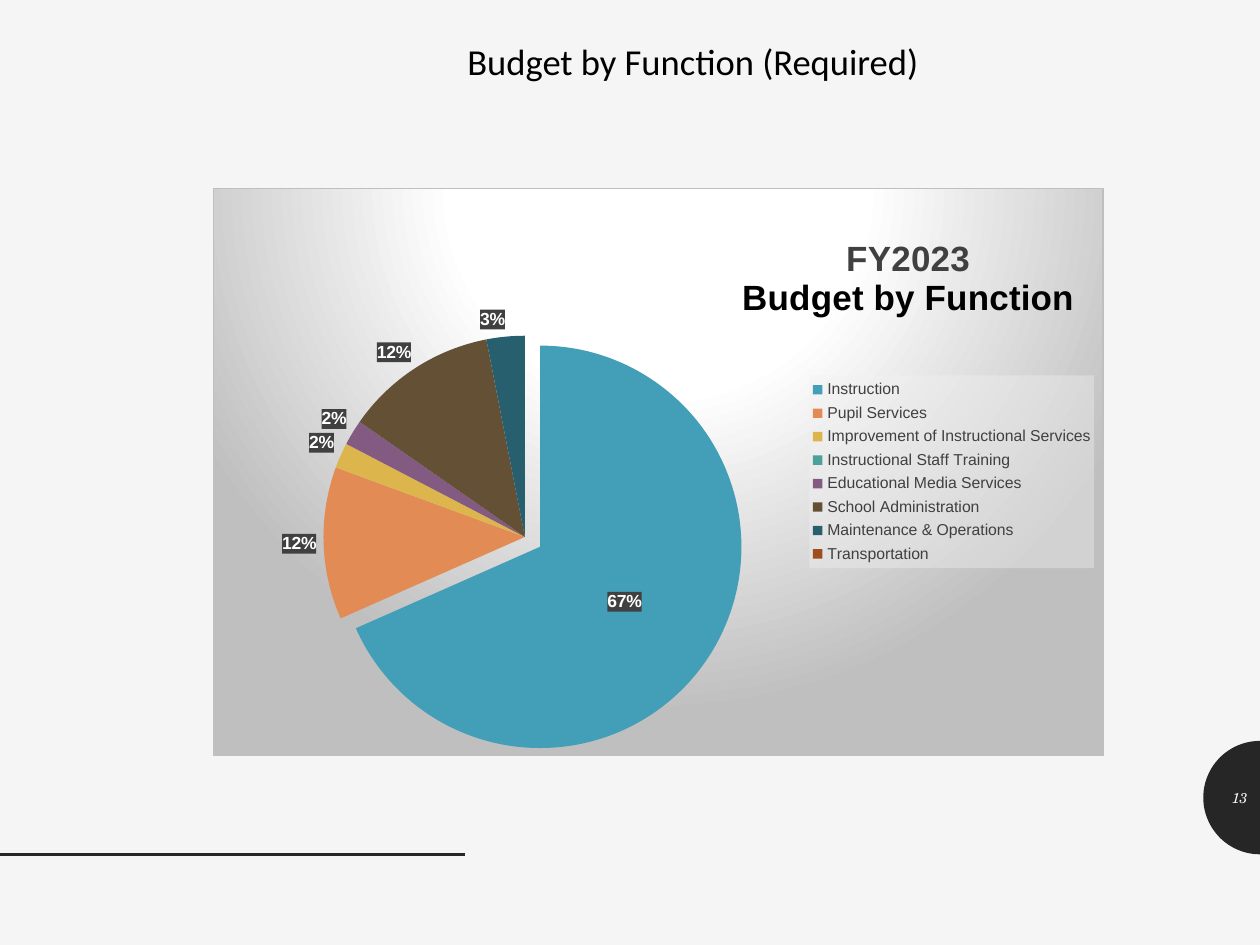
from copy import deepcopy
from dataclasses import dataclass
from math import cos, pi, sin

from pptx import Presentation
from pptx.chart.data import CategoryChartData
from pptx.dml.color import RGBColor
from pptx.enum.chart import XL_CHART_TYPE, XL_LABEL_POSITION, XL_LEGEND_POSITION
from pptx.enum.shapes import MSO_CONNECTOR
from pptx.enum.text import MSO_ANCHOR, PP_ALIGN
from pptx.oxml import parse_xml
from pptx.oxml.ns import nsdecls, qn
from pptx.util import Pt


@dataclass(frozen=True)
class Theme:
    background: str = "F5F5F5"
    dark: str = "262626"
    black: str = "000000"
    white: str = "FFFFFF"
    gray: str = "404040"
    border: str = "BFBFBF"
    legend_fill: str = "F2F2F2"
    heading_font: str = "Calibri"
    chart_font: str = "Arial"
    number_font: str = "TeX Gyre Schola"
    heading_size: float = 20.9
    number_size: float = 8.2
    chart_title_size: float = 20
    label_size: float = 10
    legend_size: float = 9


@dataclass(frozen=True)
class Frame:
    left: float
    top: float
    width: float
    height: float


@dataclass(frozen=True)
class Caption:
    text: str
    frame: Frame
    font: str
    size: float
    color: str
    align: PP_ALIGN
    italic: bool = False
    line_spacing: float = 1.0


@dataclass(frozen=True)
class Slice:
    name: str
    value: int
    color: str


THEME = Theme()
SLICES = [
    Slice("Instruction", 67, "439EB7"),
    Slice("Pupil Services", 12, "E28B55"),
    Slice("Improvement of Instructional Services", 2, "DCB64D"),
    Slice("Instructional Staff Training", 0, "4CA198"),
    Slice("Educational Media Services", 2, "835B82"),
    Slice("School Administration", 12, "645135"),
    Slice("Maintenance & Operations", 3, "285F6E"),
    Slice("Transportation", 0, "9F4E1B"),
]
CAPTIONS = [
    Caption("Budget by Function (Required)", Frame(72, 21.6, 648, 31),
            THEME.heading_font, THEME.heading_size, THEME.black, PP_ALIGN.CENTER, line_spacing=0.8),
    Caption("13", Frame(687.6, 441.4, 32.4, 28.8),
            THEME.number_font, THEME.number_size, THEME.background, PP_ALIGN.RIGHT, italic=True),
]


def style_font(font, name: str, size: float, color: str, bold: bool = False, italic: bool = False) -> None:
    font.name, font.size, font.bold, font.italic = name, Pt(size), bold, italic
    font.color.rgb = RGBColor.from_string(color)


def add_caption(page, caption: Caption) -> None:
    frame = caption.frame
    box = page.shapes.add_textbox(Pt(frame.left), Pt(frame.top), Pt(frame.width), Pt(frame.height))
    box.text_frame.text = caption.text
    box.text_frame.word_wrap = True
    box.text_frame.vertical_anchor = MSO_ANCHOR.MIDDLE
    paragraph = box.text_frame.paragraphs[0]
    paragraph.alignment = caption.align
    paragraph.line_spacing = caption.line_spacing
    style_font(paragraph.runs[0].font, caption.font, caption.size, caption.color, italic=caption.italic)


def add_half_disc(page, center_x: float, center_y: float, radius: float, steps: int = 48) -> None:
    angles = [pi * step / steps for step in range(steps + 1)]
    points = [(Pt(center_x - radius * sin(angle)), Pt(center_y - radius * cos(angle))) for angle in angles]
    builder = page.shapes.build_freeform(*points[0])
    builder.add_line_segments(points[1:], close=True)
    disc = builder.convert_to_shape()
    disc.shadow.inherit = False
    disc.fill.solid()
    disc.fill.fore_color.rgb = RGBColor.from_string(THEME.dark)
    disc.line.fill.background()


def add_rule(page, length: float, top: float) -> None:
    rule = page.shapes.add_connector(MSO_CONNECTOR.STRAIGHT, Pt(0), Pt(top), Pt(length), Pt(top))
    rule.line.color.rgb = RGBColor.from_string(THEME.dark)
    rule.line.width = Pt(2)
    rule._element.spPr.append(parse_xml(f'<a:effectLst {nsdecls("a")}/>'))


def shape_properties(content: str):
    return parse_xml(f'<c:spPr {nsdecls("c", "a")}>{content}</c:spPr>')


def solid_fill(color: str, opacity: int = 100) -> str:
    return (f'<a:solidFill><a:srgbClr val="{color}"><a:alpha val="{opacity * 1000}"/>'
            '</a:srgbClr></a:solidFill>')


def place(element, position: int, left: float, top: float, size: str = "", inner: bool = False) -> None:
    for previous in element.findall(qn("c:layout")):
        element.remove(previous)
    target = '<c:layoutTarget val="inner"/>' if inner else ""
    element.insert(position, parse_xml(
        f'<c:layout {nsdecls("c")}><c:manualLayout>{target}<c:xMode val="edge"/><c:yMode val="edge"/>'
        f'<c:x val="{left}"/><c:y val="{top}"/>{size}</c:manualLayout></c:layout>'))


def extent(width: float, height: float) -> str:
    return f'<c:w val="{width}"/><c:h val="{height}"/>'


def style_labels(series) -> None:
    labels = series.data_labels
    labels.show_value = True
    labels.number_format = '0"%"'
    labels.number_format_is_linked = False
    labels.position = XL_LABEL_POSITION.OUTSIDE_END
    style_font(labels.font, THEME.chart_font, THEME.label_size, THEME.white, bold=True)
    number_format = labels._element.find(qn("c:numFmt"))
    number_format.addnext(shape_properties(solid_fill(THEME.gray)))
    series.points[0].data_label.position = XL_LABEL_POSITION.CENTER
    first = labels._element.find(qn("c:dLbl"))
    for tag in ("c:txPr", "c:spPr", "c:numFmt"):
        for previous in first.findall(qn(tag)):
            first.remove(previous)
        first.find(qn("c:idx")).addnext(deepcopy(labels._element.find(qn(tag))))
    for index, part in enumerate(SLICES):
        if part.value == 0:
            number_format.addprevious(parse_xml(
                f'<c:dLbl {nsdecls("c")}><c:idx val="{index}"/><c:delete val="1"/></c:dLbl>'))


def add_budget_chart(page, frame: Frame) -> None:
    data = CategoryChartData()
    data.categories = [part.name for part in SLICES]
    data.add_series("Series 1", [part.value for part in SLICES])
    chart = page.shapes.add_chart(XL_CHART_TYPE.PIE, Pt(frame.left), Pt(frame.top),
                                  Pt(frame.width), Pt(frame.height), data).chart
    style_font(chart.font, THEME.chart_font, THEME.label_size, THEME.black)
    stops = "".join(f'<a:gs pos="{stop * 1000}"><a:srgbClr val="{color}"/></a:gs>'
                    for stop, color in ((0, THEME.white), (39, THEME.white), (100, THEME.border)))
    chart._chartSpace.find(qn("c:chart")).addnext(shape_properties(
        f'<a:gradFill><a:gsLst>{stops}</a:gsLst><a:path path="circle">'
        '<a:fillToRect l="50000" t="-80000" r="50000" b="180000"/></a:path></a:gradFill>'
        f'<a:ln w="{Pt(0.75)}">{solid_fill(THEME.border)}</a:ln>'))

    chart.has_title = True
    title = chart.chart_title.text_frame
    title.text = "FY2023\nBudget by Function"
    for paragraph, color in zip(title.paragraphs, (THEME.gray, THEME.black)):
        paragraph.alignment = PP_ALIGN.CENTER
        style_font(paragraph.runs[0].font, THEME.chart_font, THEME.chart_title_size, color, bold=True)
    place(chart.chart_title._element, 1, 0.59, 0.08)

    chart.has_legend = True
    legend = chart.legend
    legend.position = XL_LEGEND_POSITION.RIGHT
    legend.include_in_layout = False
    style_font(legend.font, THEME.chart_font, THEME.legend_size, THEME.gray)
    place(legend._element, 1, 0.67, 0.33, extent(0.32, 0.34))
    legend._element.find(qn("c:txPr")).addprevious(shape_properties(solid_fill(THEME.legend_fill, 39)))

    plot = chart.plots[0]
    plot.vary_by_categories = True
    series = plot.series[0]
    for point, part in zip((series.points[index] for index in range(len(SLICES))), SLICES):
        point.format.fill.solid()
        point.format.fill.fore_color.rgb = RGBColor.from_string(part.color)
    series._element.find(qn("c:dPt")).find(qn("c:spPr")).addprevious(
        parse_xml(f'<c:explosion {nsdecls("c")} val="9"/>'))
    style_labels(series)
    place(plot._element.getparent(), 0, 0.12, 0.26, extent(0.46, 0.71), inner=True)


def main() -> None:
    deck = Presentation()
    deck.slide_width, deck.slide_height = Pt(720), Pt(540)
    page = deck.slides.add_slide(deck.slide_layouts[6])
    page.background.fill.solid()
    page.background.fill.fore_color.rgb = RGBColor.from_string(THEME.background)
    add_half_disc(page, 720, 455.8, 32.4)
    add_rule(page, 265.7, 488.2)
    for caption in CAPTIONS:
        add_caption(page, caption)
    add_budget_chart(page, Frame(121.7, 107.3, 509, 324.7))
    deck.save("out.pptx")


if __name__ == "__main__":
    main()
